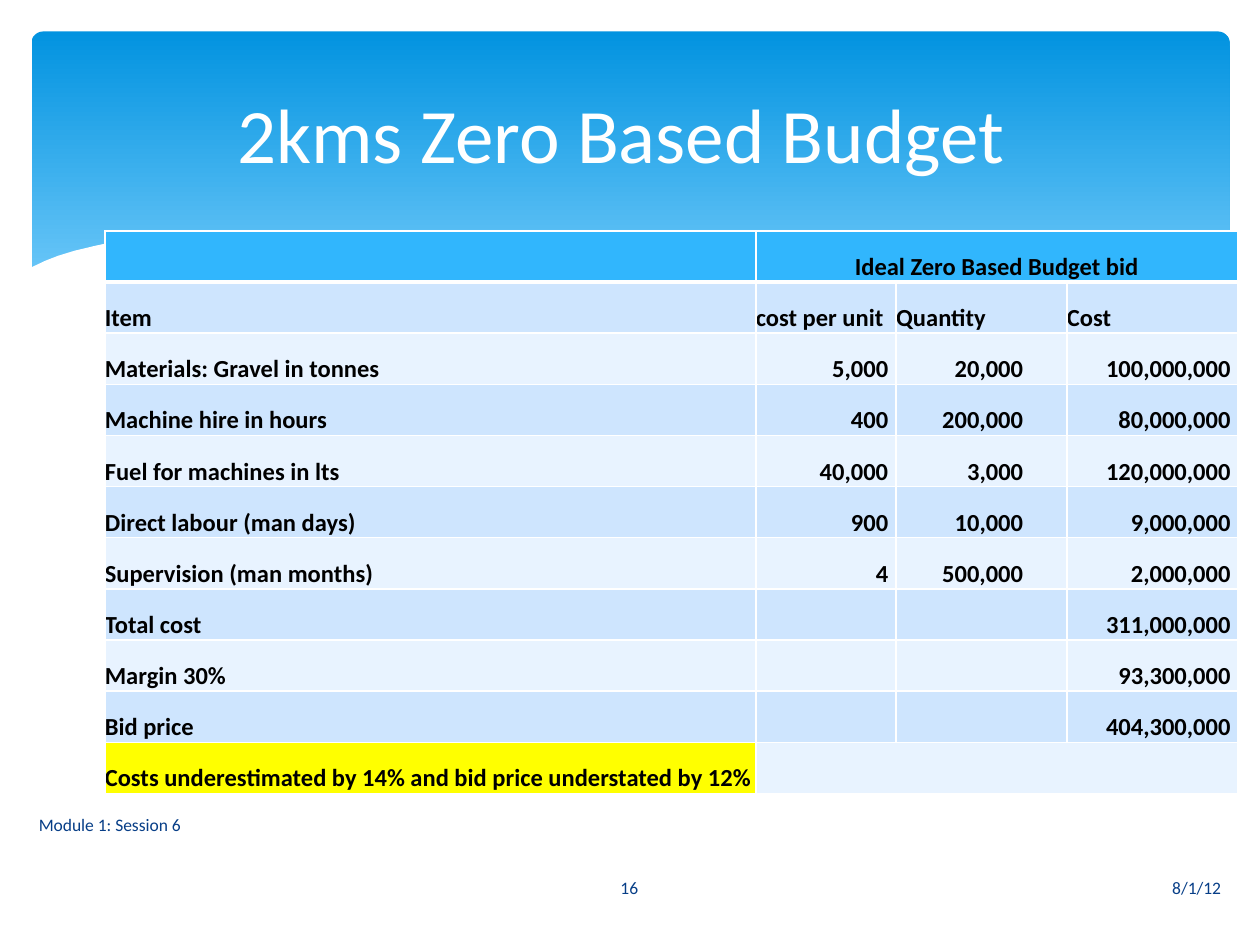
import pptx
import pptx.dml.color
import pptx.enum.shapes
import pptx.enum.text
import pptx.oxml
import pptx.oxml.ns
import pptx.util
from lxml import etree

Pt = pptx.util.Pt
RGB = pptx.dml.color.RGBColor.from_string
ALIGN = pptx.enum.text.PP_ALIGN
ANCHOR = pptx.enum.text.MSO_ANCHOR
qn = pptx.oxml.ns.qn


class Theme:
    font = "Calibri"
    white, black = "FFFFFF", "000000"
    band_top, band_bottom, ribbon = "0293E0", "83D3FE", "C6E7FC"
    footer, header = "073E87", "31B6FD"
    row_dark, row_light, note = "CEE5FE", "E8F3FF", "FFFF00"
    title_size, table_size, footer_size = 44, 14, 10


def write(frame, text, size, color, align, anchor, bold=False):
    frame.text = text
    frame.vertical_anchor = anchor
    paragraph = frame.paragraphs[0]
    paragraph.alignment = align
    font = paragraph.runs[0].font
    font.name, font.size, font.bold = Theme.font, Pt(size), bold
    font.color.rgb = RGB(color)


def draw_wave(points, fill=None, opacity=100):
    corners = [(Pt(x), Pt(y)) for x, y in points]
    builder = slide.shapes.build_freeform(*corners[0])
    builder.add_line_segments(corners[1:], close=fill is not None)
    shape = builder.convert_to_shape()
    shape.shadow.inherit = False
    if fill is None:
        shape.fill.background()
        shape.line.color.rgb = RGB(Theme.white)
        shape.line.width = Pt(0)
        return
    shape.line.fill.background()
    shape.fill.solid()
    shape.fill.fore_color.rgb = RGB(fill)
    if opacity < 100:
        color = shape.fill._xPr.find(".//" + qn("a:srgbClr"))
        etree.SubElement(color, qn("a:alpha"), val=str(opacity * 1000))


presentation = pptx.Presentation()
presentation.slide_width, presentation.slide_height = Pt(720), Pt(540)
slide = presentation.slides.add_slide(presentation.slide_layouts[5])

# Gradient band
band = slide.shapes.add_shape(
    pptx.enum.shapes.MSO_SHAPE.ROUNDED_RECTANGLE, Pt(18), Pt(18), Pt(684.7), Pt(194.4))
band.adjustments[0] = 0.034
band.shadow.inherit = False
band.line.fill.background()
band.fill.gradient()
band.fill.gradient_angle = 270
for stop, color, position in zip(
        band.fill.gradient_stops, (Theme.band_top, Theme.band_bottom), (0, 0.9)):
    stop.color.rgb = RGB(color)
    stop.position = position

# Translucent ribbons, hairlines and the white wave that cuts the band
draw_wave([(702, 144), (682.6, 146.9), (652.3, 153.4), (619.9, 160.6), (579.6, 170.6),
           (542.2, 178.6), (475.9, 190.8), (507.6, 195.1), (536.4, 198), (562.3, 199.4),
           (593.3, 199.8), (621.4, 198), (645.8, 194.4), (668.2, 189.4), (693.4, 181.4),
           (702.7, 177.8), (702.7, 144)], Theme.ribbon, 29)
draw_wave([(643, 196.6), (602.6, 190.8), (558, 182.9), (508.3, 172.8), (452.9, 159.8),
           (409.7, 149.8), (370.1, 142.6), (334.8, 137.5), (302.4, 134.6), (273.6, 133.2),
           (247.7, 133.9), (225.4, 135.4), (205.9, 137.5), (246.2, 143.3), (290.9, 151.9),
           (323.3, 159.8), (381.6, 172.8), (432.7, 183.6), (478.8, 191.5), (519.8, 197.3),
           (556.6, 199.4), (588.9, 200.2), (617, 199.4)], Theme.ribbon, 40)
draw_wave([(222.5, 140.4), (247.7, 136.8), (278.6, 134.6), (311.8, 134.6), (352.1, 136.8),
           (400.3, 141.8), (457.9, 149.8), (523.4, 162.7), (598.3, 180.7), (653, 195.8)])
draw_wave([(441.4, 185), (483.8, 173.5), (518.4, 164.9), (558.7, 155.5), (601.9, 146.9),
           (644.4, 139.7), (675.4, 135.4), (702, 133.2)])
draw_wave([(703.4, 177.1), (676.8, 186.5), (647.3, 193.7), (612, 198), (571, 198.7),
           (522.7, 195.8), (466.6, 188.6), (399.6, 176.4), (321.8, 158.4), (262.8, 145.4),
           (210.2, 136.8), (165.6, 133.2), (127.4, 132.5), (95, 133.9), (68.4, 137.5),
           (54.7, 140.4), (42.5, 143.3), (33.1, 146.2), (25.9, 149), (16.6, 153.4),
           (16.6, 236.9), (703.4, 236.9)], Theme.white)

# Title, brought in front of the band
title = slide.shapes.title
slide.shapes._spTree.append(title._element)
title.left, title.top, title.width, title.height = Pt(36), Pt(26.6), Pt(648), Pt(98.6)
write(title.text_frame, "2kms Zero Based Budget ", Theme.title_size, Theme.white,
      ALIGN.CENTER, ANCHOR.MIDDLE)

# Date, session and page number
for text, left, top, width, align in (
        ("8/1/12", 406.8, 492.5, 298, ALIGN.RIGHT),
        ("Module 1: Session 6", 15.1, 456.5, 298, ALIGN.LEFT),
        ("16", 313.9, 492.5, 91.4, ALIGN.CENTER)):
    box = slide.shapes.add_textbox(Pt(left), Pt(top), Pt(width), Pt(28.8))
    box.text_frame.word_wrap = True
    write(box.text_frame, text, Theme.footer_size, Theme.footer, align, ANCHOR.MIDDLE)

# Budget table
rows = [
    ("", "Ideal Zero Based Budget bid", "", ""),
    ("Item", "cost per unit", "Quantity", "Cost"),
    ("Materials: Gravel in tonnes", "5,000", "20,000", "100,000,000"),
    ("Machine hire in hours", "400", "200,000", "80,000,000"),
    ("Fuel for machines in lts", "40,000", "3,000", "120,000,000"),
    ("Direct labour (man days)", "900", "10,000", "9,000,000"),
    ("Supervision (man months)", "4", "500,000", "2,000,000"),
    ("Total cost", "", "", "311,000,000"),
    ("Margin 30%", "", "", "93,300,000"),
    ("Bid price", "", "", "404,300,000"),
    ("Costs underestimated by 14% and bid price understated by 12%", "", "", ""),
]
column_widths = (372, 80.2, 97.6, 97.6)
number_margins = (0, 4.5, 25, 4)
row_height = 29.23
last_row = len(rows) - 1
table = slide.shapes.add_table(
    len(rows), len(column_widths), Pt(59.9), Pt(131.9),
    Pt(sum(column_widths)), Pt(row_height * len(rows))).table
for column, width in zip(table.columns, column_widths):
    column.width = Pt(width)
for row in table.rows:
    row.height = Pt(row_height)
for merged_row in (0, last_row):
    table.cell(merged_row, 1).merge(table.cell(merged_row, 3))

for row_index, texts in enumerate(rows):
    for column_index, text in enumerate(texts):
        cell = table.cell(row_index, column_index)
        is_number = row_index > 1 and column_index > 0
        cell.margin_left = cell.margin_top = cell.margin_bottom = Pt(0)
        cell.margin_right = Pt(number_margins[column_index] if is_number else 0)
        if text:
            align = ALIGN.RIGHT if is_number else ALIGN.LEFT
            if row_index == 0:
                align = ALIGN.CENTER
            write(cell.text_frame, text, Theme.table_size, Theme.black, align,
                  ANCHOR.BOTTOM, bold=True)
            cell.vertical_anchor = ANCHOR.BOTTOM
        fill = Theme.row_dark if row_index % 2 else Theme.row_light
        if row_index == 0:
            fill = Theme.header
        elif row_index == last_row and column_index == 0:
            fill = Theme.note
        cell.fill.solid()
        cell.fill.fore_color.rgb = RGB(fill)

        # White rules, thicker under the header
        widths = {"lnL": 1, "lnR": 1, "lnT": 3 if row_index == 1 else 1,
                  "lnB": 3 if row_index == 0 else 1}
        properties = cell._tc.get_or_add_tcPr()
        for position, (side, width) in enumerate(widths.items()):
            border = etree.Element(qn("a:" + side), w=str(Pt(width)))
            solid = etree.SubElement(border, qn("a:solidFill"))
            etree.SubElement(solid, qn("a:srgbClr"), val=Theme.white)
            properties.insert(position, border)

presentation.save("out.pptx")
